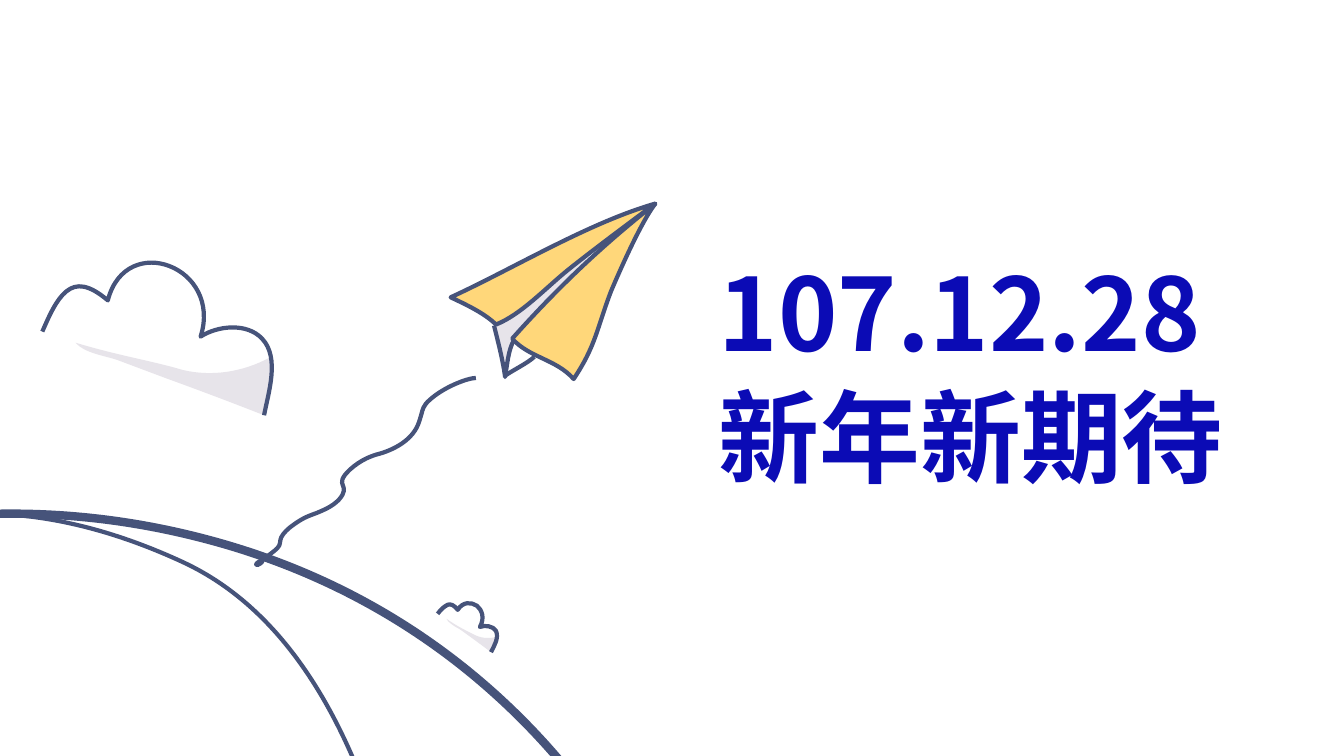
from dataclasses import dataclass

from lxml import etree
from pptx import Presentation
from pptx import util as u
from pptx.dml.color import RGBColor
from pptx.enum import text
from pptx.oxml.ns import qn


@dataclass(frozen=True)
class Theme:
    ink: str = "46537A"
    shade: str = "E7E4EA"
    paper: str = "FFD77A"
    title: str = "0B0BB5"
    font: str = "Noto Sans CJK SC"
    title_size: int = 72
    title_leading: int = 88
    thin: int = 3
    thick: int = 6


class Scene:
    def __init__(self, slide, theme):
        self.slide, self.theme = slide, theme

    def outline(self, shapes, start, segments, fill=None, line=None, close=False):
        """Draw segments of six numbers (a curve) or two numbers (a straight line)."""
        points = [(u.Inches(x), u.Inches(y))
                  for seg in segments for x, y in zip(seg[::2], seg[1::2])]
        builder = shapes.build_freeform(*map(u.Inches, start), scale=1.0)
        shape = builder.add_line_segments(points, close=close).convert_to_shape()
        shape.shadow.inherit = False

        # Turn each run of three points into one cubic curve
        steps = iter(list(shape._element.iter(qn("a:lnTo"))))
        for seg in segments:
            step = next(steps)
            if len(seg) == 6:
                step_path = step.getparent()
                curve = etree.Element(qn("a:cubicBezTo"))
                step_path.replace(step, curve)
                curve.append(step[0])
                for _ in range(2):
                    control = next(steps)
                    curve.append(control[0])
                    step_path.remove(control)

        if fill:
            shape.fill.solid()
            shape.fill.fore_color.rgb = RGBColor.from_string(fill)
        else:
            shape.fill.background()
        if line:
            shape.line.color.rgb = RGBColor.from_string(self.theme.ink)
            shape.line.width = u.Pt(line)
        else:
            shape.line.fill.background()

    def drawing(self, parts):
        """Group the outlines that make up one object."""
        group = self.slide.shapes.add_group_shape()
        for part in parts:
            self.outline(group.shapes, **part)

    def heading(self, lines, left, top, width, height):
        theme = self.theme
        frame = self.slide.shapes.add_textbox(
            *map(u.Inches, (left, top, width, height))).text_frame
        frame.word_wrap = False
        frame.auto_size = text.MSO_AUTO_SIZE.SHAPE_TO_FIT_TEXT
        frame.text = "\n".join(lines)
        style = {"name": theme.font, "size": u.Pt(theme.title_size), "bold": True}
        for paragraph in frame.paragraphs:
            paragraph.line_spacing = u.Pt(theme.title_leading)
            run = paragraph.runs[0]
            for key, value in style.items():
                setattr(run.font, key, value)
            run.font.color.rgb = RGBColor.from_string(theme.title)
            east_asian = etree.SubElement(run._r.get_or_add_rPr(), qn("a:ea"))
            east_asian.set("typeface", theme.font)


THEME = Theme()

HILLS = [
    dict(start=(6.49, 17.44), line=THEME.thick, close=True, segments=[
        (8.7, 13.19, 7.28, 6.67, 1.97, 5.33),
        (-3.61, 3.91, -9.01, 9.2, -8.29, 14.56),
        (-7.35, 21.4, 1.33, 24.09, 5.68, 18.68),
        (5.99, 18.29, 6.26, 17.88, 6.49, 17.44)]),
    dict(start=(0.57, 21.23), line=THEME.thin, close=True, segments=[
        (4.38, 19.99, 4.71, 13.79, 4.24, 10.47),
        (4.01, 8.83, 3.51, 6.37, 1.82, 5.58),
        (-3.5, 3.11, -5.71, 10.71, -5.37, 14.33),
        (-5.12, 17.07, -2.92, 22.36, 0.57, 21.23)]),
]

TRAIL = [
    dict(start=(2.54, 5.6), line=THEME.thin, close=True, segments=[
        (2.54, 5.59, 2.58, 5.56, 2.6, 5.56),
        (2.63, 5.56, 2.54, 5.63, 2.54, 5.6)]),
    dict(start=(4.72, 3.75), line=THEME.thin, segments=[
        (4.64, 3.75, 4.4, 3.84, 4.26, 3.97),
        (4.2, 4.02, 4.19, 4.07, 4.18, 4.11),
        (4.16, 4.17, 4.15, 4.25, 4.06, 4.34),
        (3.97, 4.43, 3.84, 4.48, 3.77, 4.5),
        (3.69, 4.52, 3.58, 4.56, 3.47, 4.66),
        (3.29, 4.83, 3.5, 4.8, 3.36, 4.96),
        (3.29, 5.03, 3.21, 5.06, 3.14, 5.09),
        (3.06, 5.12, 3.02, 5.13, 2.92, 5.2),
        (2.86, 5.24, 2.81, 5.29, 2.79, 5.33),
        (2.77, 5.37, 2.79, 5.4, 2.75, 5.44),
        (2.72, 5.47, 2.65, 5.52, 2.61, 5.55)]),
]

PLANE = [
    # Shaded body
    dict(start=(5.1, 3.37), fill=THEME.shade, close=True, segments=[
        (5.04, 3.47, 5.02, 3.62, 5.01, 3.73),
        (4.99, 3.57, 4.93, 3.39, 4.9, 3.23),
        (5.93, 2.44), (5.1, 3.37)]),
    # Right and left wings
    dict(start=(6.5, 2.02), fill=THEME.paper, line=THEME.thin, close=True, segments=[
        (5.94, 2.46, 5.5, 2.89, 5.08, 3.36),
        (5.25, 3.55, 5.51, 3.56, 5.69, 3.76),
        (5.91, 3.43, 5.92, 3.26, 6.06, 2.89),
        (6.15, 2.68, 6.36, 2.2, 6.5, 2.02)]),
    dict(start=(5.62, 2.69), fill=THEME.paper, line=THEME.thin, close=True, segments=[
        (5.41, 2.86, 5.17, 3.12, 4.92, 3.22),
        (4.81, 3.11, 4.62, 3.02, 4.47, 2.95),
        (5.1, 2.66, 5.84, 2.21, 6.5, 2.02),
        (6.5, 2.02, 5.89, 2.47, 5.62, 2.69)]),
    # Keel folds
    dict(start=(5.1, 3.37), line=THEME.thin, segments=[
        (5.04, 3.47, 5.03, 3.63, 5.01, 3.74),
        (4.99, 3.58, 4.94, 3.39, 4.9, 3.23)]),
    dict(start=(5.3, 3.54), line=THEME.thin, segments=[
        (5.22, 3.61, 5.11, 3.66, 5.02, 3.72)]),
]

LARGE_CLOUD = [
    dict(start=(0.75, 3.4), fill=THEME.shade, close=True, segments=[
        (1.18, 3.53, 1.51, 3.58, 1.81, 3.67),
        (2.1, 3.74, 2.41, 3.69, 2.67, 3.55),
        (2.73, 3.67, 2.62, 4.12, 2.62, 4.12),
        (2.29, 3.99, 1.97, 3.87, 1.64, 3.75),
        (1.48, 3.69, 1.32, 3.63, 1.16, 3.57),
        (1.04, 3.53, 0.83, 3.5, 0.75, 3.4)]),
    dict(start=(0.42, 3.29), line=THEME.thin, segments=[
        (0.49, 3.13, 0.56, 2.97, 0.66, 2.89),
        (0.76, 2.81, 0.88, 2.82, 1.07, 2.98),
        (1.16, 2.63, 1.45, 2.55, 1.68, 2.64),
        (1.92, 2.73, 2.1, 3, 1.99, 3.34),
        (2.16, 3.23, 2.45, 3.2, 2.6, 3.36),
        (2.78, 3.55, 2.66, 3.9, 2.62, 4.12)]),
]

SMALL_CLOUD = [
    dict(start=(4.43, 6.14), fill=THEME.shade, close=True, segments=[
        (4.53, 6.21, 4.61, 6.25, 4.69, 6.29),
        (4.76, 6.33, 4.84, 6.34, 4.92, 6.32),
        (4.93, 6.35, 4.87, 6.47, 4.87, 6.47),
        (4.79, 6.41, 4.71, 6.35, 4.64, 6.3),
        (4.6, 6.27, 4.56, 6.24, 4.52, 6.22),
        (4.49, 6.2, 4.44, 6.17, 4.43, 6.14)]),
    dict(start=(4.34, 6.09), line=THEME.thin, segments=[
        (4.37, 6.05, 4.4, 6.02, 4.44, 6),
        (4.47, 5.99, 4.5, 6, 4.54, 6.05),
        (4.59, 5.97, 4.67, 5.97, 4.73, 6.01),
        (4.78, 6.05, 4.81, 6.13, 4.76, 6.22),
        (4.81, 6.2, 4.89, 6.21, 4.92, 6.26),
        (4.95, 6.33, 4.9, 6.41, 4.87, 6.47)]),
]


def main():
    deck = Presentation()
    deck.slide_width, deck.slide_height = u.Inches(13.33), u.Inches(7.5)
    scene = Scene(deck.slides.add_slide(deck.slide_layouts[6]), THEME)

    # Date and greeting
    scene.heading(["107.12.28", "新年新期待"], 7.03, 2.42, 5.26, 2.52)

    # Illustration, from back to front
    for parts in (HILLS, TRAIL, PLANE, LARGE_CLOUD, SMALL_CLOUD):
        scene.drawing(parts)

    deck.save("out.pptx")


if __name__ == "__main__":
    main()
